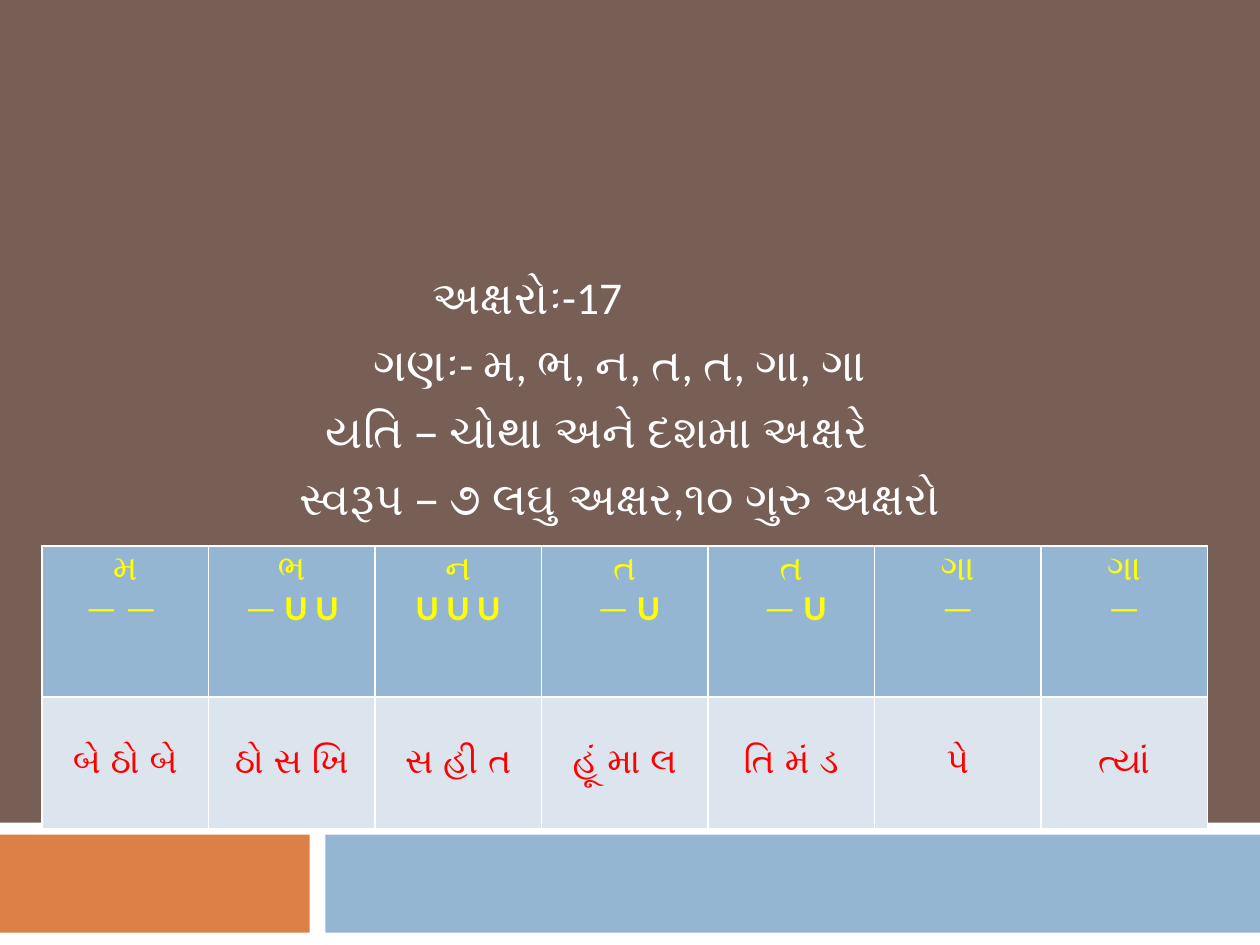
import pptx
import pptx.util
import pptx.dml.color
import pptx.enum.shapes
import pptx.enum.text
import pptx.oxml
import pptx.oxml.ns

Pt = pptx.util.Pt
ANCHOR = pptx.enum.text.MSO_ANCHOR
COLORS = {
    "brown": "775F55", "white": "FFFFFF", "orange": "DD8047", "blue": "94B6D2",
    "pale": "DCE5EE", "yellow": "FFFF00", "red": "FF0000",
}
METRE_LINES = [
    ("અક્ષરોઃ-17", 105),
    ("ગણઃ- મ, ભ, ન, ત, ત, ગા, ગા", 0),
    ("યતિ – ચોથા અને દશમા અક્ષરે", 26),
    ("સ્વરૂપ – ૭ લઘુ અક્ષર,૧૦ ગુરુ અક્ષરો", 0),
]
FEET = [
    ("મ", "— — ", "", "બે ઠો બે"),
    ("ભ", "—", " U U", "ઠો સ ખિ"),
    ("ન", "", "U U U", "સ હી ત"),
    ("ત", " — ", "U", "હૂં મા લ"),
    ("ત", " — ", "U", "તિ મં ડ"),
    ("ગા", "—", "", "પે"),
    ("ગા", "—", "", "ત્યાં"),
]


def rgb(name):
    return pptx.dml.color.RGBColor.from_string(COLORS[name])


def paint(thing, color):
    thing.fill.solid()
    thing.fill.fore_color.rgb = rgb(color)


def add_text(para, text, size=20, color="white", bold=False):
    para.alignment = pptx.enum.text.PP_ALIGN.CENTER
    span = para.add_run()
    span.text = text
    span.font.name = "Calibri"
    span.font.size = Pt(size)
    span.font.bold = bold
    span.font.color.rgb = rgb(color)


def add_bands(page, left, top, width, height):
    gap = 7
    split = 177
    bands = [
        (left, top, width, height, "white"),
        (left, top + gap, split, height - 2 * gap, "orange"),
        (left + split + 9, top + gap, width - split - 9, height - 2 * gap, "blue"),
    ]
    for x, y, w, h, color in bands:
        band = page.shapes.add_shape(
            pptx.enum.shapes.MSO_SHAPE.RECTANGLE, Pt(x), Pt(y), Pt(w), Pt(h))
        band.shadow.inherit = False
        band.line.fill.background()
        paint(band, color)


def fill_subtitle(page, left, top, width, height):
    box = page.placeholders[1]
    box.left, box.top, box.width, box.height = Pt(left), Pt(top), Pt(width), Pt(height)
    frame = box.text_frame
    frame.word_wrap = True
    frame.auto_size = pptx.enum.text.MSO_AUTO_SIZE.NONE
    frame.vertical_anchor = ANCHOR.MIDDLE
    margin = max(shift for _, shift in METRE_LINES)
    frame.margin_right = Pt(7.2 + margin)
    frame.margin_bottom = Pt(42)
    for index, (text, shift) in enumerate(METRE_LINES):
        para = frame.add_paragraph() if index else frame.paragraphs[0]
        para.space_before = Pt(7)
        settings = para._p.get_or_add_pPr()
        settings.set("marL", str(Pt(margin)))
        settings.set("indent", str(Pt(-shift)))
        add_text(para, text, size=26)


def style_cell(cell, color):
    settings = cell._tc.get_or_add_tcPr()
    for side in ("lnL", "lnR", "lnT", "lnB"):
        settings.append(pptx.oxml.parse_xml(
            f'<a:{side} {pptx.oxml.ns.nsdecls("a")} w="{Pt(1)}"><a:solidFill>'
            f'<a:srgbClr val="{COLORS["white"]}"/></a:solidFill></a:{side}>'))
    paint(cell, color)


def add_feet_table(page, left, top, width, row_heights):
    table = page.shapes.add_table(
        2, len(FEET), Pt(left), Pt(top), Pt(width), Pt(sum(row_heights))).table
    for row, height in zip(table.rows, row_heights):
        row.height = Pt(height)
    for index, (name, dashes, curves, syllables) in enumerate(FEET):
        table.columns[index].width = Pt(width / len(FEET))
        head, body = table.cell(0, index), table.cell(1, index)
        style_cell(head, "blue")
        style_cell(body, "pale")
        add_text(head.text_frame.paragraphs[0], name, color="yellow", bold=True)
        marks = head.text_frame.add_paragraph()
        for text, bold in ((dashes, False), (curves, True)):
            if text:
                add_text(marks, text, color="yellow", bold=bold)
        body.vertical_anchor = ANCHOR.MIDDLE
        add_text(body.text_frame.paragraphs[0], syllables, color="red", bold=True)


def main():
    deck = pptx.Presentation()
    deck.slide_width, deck.slide_height = Pt(720), Pt(540)
    page = deck.slides.add_slide(deck.slide_layouts[0])
    paint(page.background, "brown")
    title = page.shapes.title._element
    title.getparent().remove(title)
    add_bands(page, 0, 470, 720, 70)
    fill_subtitle(page, 30, 0, 648, 492)
    add_feet_table(page, 24, 312, 666, (86.4, 75))
    deck.save("out.pptx")


if __name__ == "__main__":
    main()
